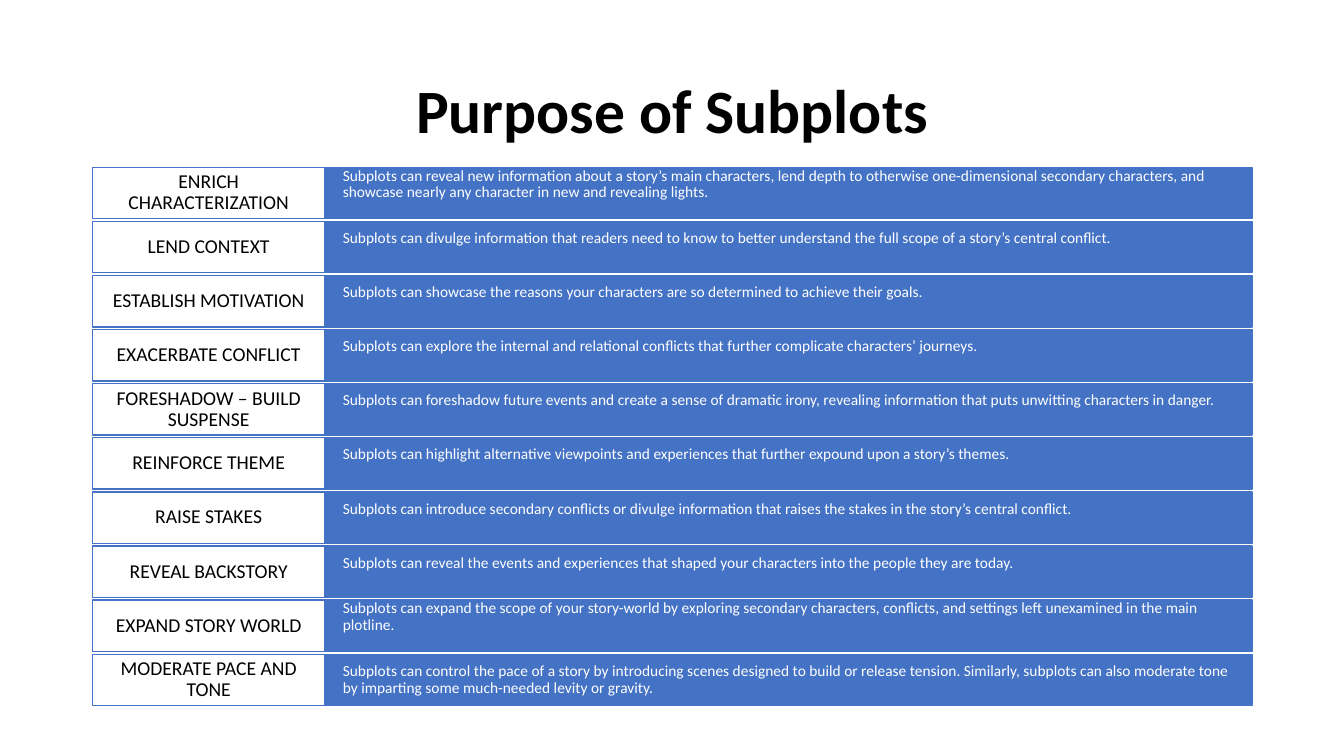
from pptx import Presentation
from pptx import util as u
from pptx.dml.color import RGBColor
from pptx.enum import shapes, text

BLUE = RGBColor(0x44, 0x72, 0xC4)
WHITE = RGBColor(0xFF, 0xFF, 0xFF)
BLACK = RGBColor(0, 0, 0)
FONT = "Calibri"
WIDE, HIGH = 13.33, 7.5
LEFT, SPAN = 0.92, 11.5
SHARE = 0.2   # label column's share of the width
ROW = 0.51    # row height
LIFT = 0.17   # raises one-line and long details by half a line

# Label, detail, bottom inset of the detail
ROWS = [
    ("ENRICH CHARACTERIZATION",
     "Subplots can reveal new information about a story’s main characters, lend depth to otherwise "
     "one-dimensional secondary characters, and showcase nearly any character in new and revealing lights.",
     LIFT),
    ("LEND CONTEXT",
     "Subplots can divulge information that readers need to know to better understand the full scope "
     "of a story’s central conflict.", LIFT),
    ("ESTABLISH MOTIVATION",
     "Subplots can showcase the reasons your characters are so determined to achieve their goals.", LIFT),
    ("EXACERBATE CONFLICT",
     "Subplots can explore the internal and relational conflicts that further complicate "
     "characters’ journeys.", LIFT),
    ("FORESHADOW – BUILD SUSPENSE",
     "Subplots can foreshadow future events and create a sense of dramatic irony, revealing "
     "information that puts unwitting characters in danger.", LIFT),
    ("REINFORCE THEME",
     "Subplots can highlight alternative viewpoints and experiences that further expound upon "
     "a story’s themes.", LIFT),
    ("RAISE STAKES",
     "Subplots can introduce secondary conflicts or divulge information that raises the stakes "
     "in the story’s central conflict.", LIFT),
    ("REVEAL BACKSTORY",
     "Subplots can reveal the events and experiences that shaped your characters into the people "
     "they are today.", LIFT),
    ("EXPAND STORY WORLD",
     "Subplots can expand the scope of your story-world by exploring secondary characters, conflicts, "
     "and settings left unexamined in the main plotline.", LIFT),
    ("MODERATE PACE AND TONE",
     "Subplots can control the pace of a story by introducing scenes designed to build or release "
     "tension. Similarly, subplots can also moderate tone by imparting some much-needed levity or gravity.",
     0),
]


def write(shape, words, size, color, align, bold=False):
    frame = shape.text_frame
    frame.text = words
    frame.word_wrap = True
    frame.vertical_anchor = text.MSO_ANCHOR.MIDDLE
    para = frame.paragraphs[0]
    para.alignment = align
    para.line_spacing = 0.9
    font = para.runs[0].font
    font.name, font.size, font.bold = FONT, u.Pt(size), bold
    font.color.rgb = color


def add_title(slide, left, top, wide, high):
    title = slide.shapes.title
    title.left, title.top = u.Inches(left), u.Inches(top)
    title.width, title.height = u.Inches(wide), u.Inches(high)
    write(title, "Purpose of Subplots", 44, BLACK, text.PP_ALIGN.CENTER, True)


def add_cell(slide, box, fill, side, top, base):
    cell = slide.shapes.add_shape(shapes.MSO_SHAPE.RECTANGLE, *map(u.Inches, box))
    cell.shadow.inherit = False
    cell.fill.solid()
    cell.fill.fore_color.rgb = fill
    cell.line.color.rgb = BLUE
    cell.line.width = u.Pt(1)
    frame = cell.text_frame
    frame.margin_left = frame.margin_right = u.Inches(side)
    frame.margin_top, frame.margin_bottom = u.Inches(top), u.Inches(base)
    return cell


def add_rows(slide, left, top, wide, high):
    step = (high - ROW) / (len(ROWS) - 1)
    split = wide * SHARE
    for i, (label, detail, base) in enumerate(ROWS):
        y = top + i * step
        # Detail bar, then its label
        bar = add_cell(slide, (left + split, y, wide - split, ROW), BLUE, 0.18, 0, base)
        write(bar, detail, 11, WHITE, text.PP_ALIGN.LEFT)
        tag = add_cell(slide, (left, y, split, ROW), WHITE, 0.12, 0.05, 0.05)
        write(tag, label, 14, BLACK, text.PP_ALIGN.CENTER)


def main():
    deck = Presentation()
    deck.slide_width, deck.slide_height = u.Inches(WIDE), u.Inches(HIGH)
    slide = deck.slides.add_slide(deck.slide_layouts[5])
    add_title(slide, LEFT, 0.4, SPAN, 1.45)
    add_rows(slide, LEFT, 1.66, SPAN, 5.34)
    deck.save("out.pptx")


if __name__ == "__main__":
    main()
